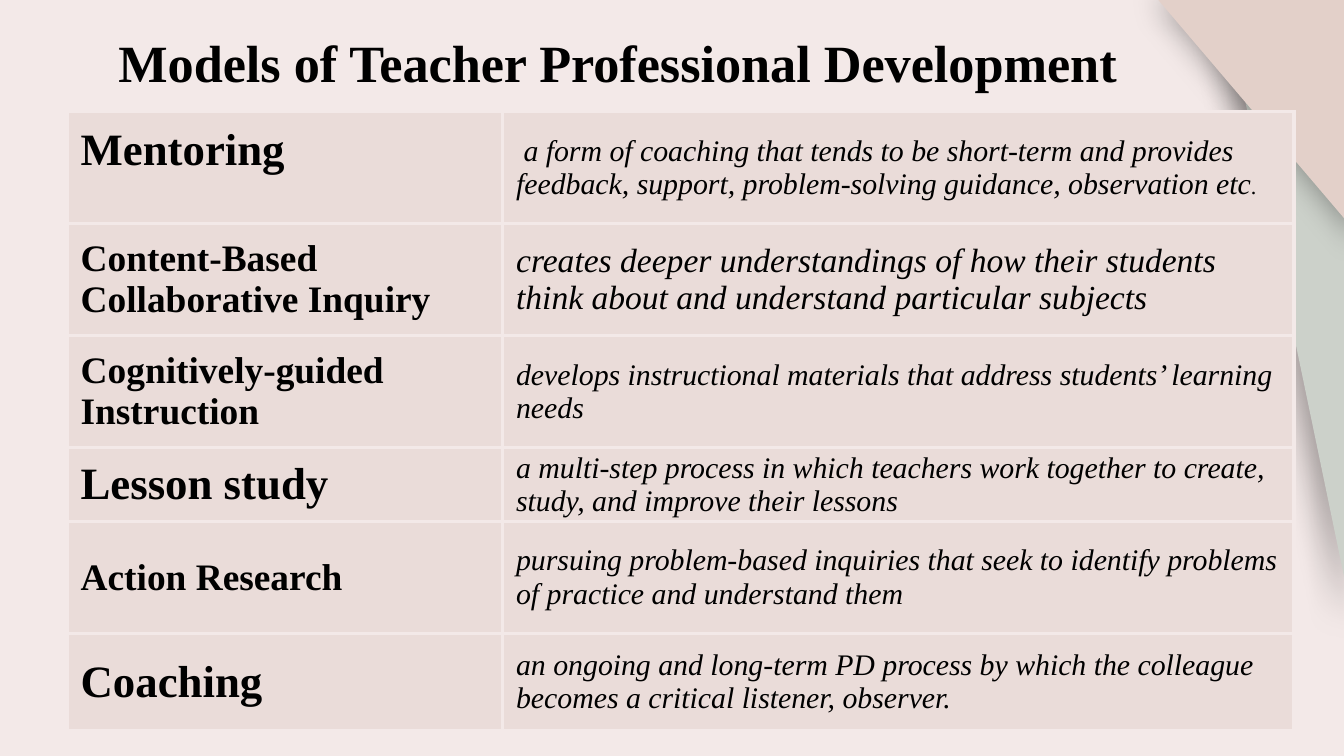
"""Builds the slide on models of teacher professional development."""
from lxml import etree
from pptx import Presentation
from pptx.dml.color import RGBColor
from pptx.enum import text
from pptx.oxml import ns
from pptx.util import Pt

MODELS = [
    ("Mentoring", 24, 60,
     [(" a form of coaching that tends to be short-term and provides feedback, "
       "support, problem-solving guidance, observation etc", 16), (".", 12)]),
    ("Content-Based Collaborative Inquiry", 20, 60,
     [("creates deeper understandings of how their students think about and "
       "understand particular subjects", 18)]),
    ("Cognitively-guided Instruction", 20, 60,
     [("develops instructional materials that address students’ learning needs", 16)]),
    ("Lesson study", 24, 39.6,
     [("a multi-step process in which teachers work together to create, study, "
       "and improve their lessons", 16)]),
    ("Action Research", 20, 60,
     [("pursuing problem-based inquiries that seek to identify problems of "
       "practice and understand them", 16)]),
    ("Coaching", 24, 52,
     [("an ongoing and long-term PD process by which the colleague becomes a "
       "critical listener, observer.", 16)]),
]


def color(code):
    return RGBColor.from_string(code)


def add_xml(parent, tag, **attributes):
    return etree.SubElement(parent, ns.qn(tag), **attributes)


class Deck:
    face = "Times New Roman"
    ink = "000000"
    paper = "F3E9E8"
    panel = "EADCD9"

    def __init__(self, width, height):
        self.presentation = Presentation()
        self.presentation.slide_width = Pt(width)
        self.presentation.slide_height = Pt(height)
        self.slide = self.presentation.slides.add_slide(
            self.presentation.slide_layouts[5])
        fill = self.slide.background.fill
        fill.solid()
        fill.fore_color.rgb = color(self.paper)

    def style(self, font, **traits):
        font.name = self.face
        font.color.rgb = color(self.ink)
        for trait, value in traits.items():
            setattr(font, trait, value)

    def fold(self, corners, tint, angle):
        start, *others = [(Pt(x), Pt(y)) for x, y in corners]
        builder = self.slide.shapes.build_freeform(*start)
        builder.add_line_segments(others)
        paper_fold = builder.convert_to_shape()
        paper_fold.fill.solid()
        paper_fold.fill.fore_color.rgb = color(tint)
        paper_fold.line.fill.background()
        effects = add_xml(paper_fold.element.spPr, "a:effectLst")
        shadow = add_xml(effects, "a:outerShdw", blurRad=str(Pt(16.9)),
                         dist=str(Pt(6)), dir=str(angle * 60000),
                         algn="ctr", rotWithShape="0")
        shade = add_xml(shadow, "a:srgbClr", val=self.ink)
        add_xml(shade, "a:alpha", val="35000")

    def title(self, wording, left, top, width, height):
        heading = self.slide.shapes.title
        heading.left, heading.top = Pt(left), Pt(top)
        heading.width, heading.height = Pt(width), Pt(height)
        self.slide.shapes.element.append(heading.element)
        frame = heading.text_frame
        frame.text = wording
        frame.auto_size = text.MSO_AUTO_SIZE.NONE
        frame.vertical_anchor = text.MSO_ANCHOR.MIDDLE
        frame.margin_left = frame.margin_right = Pt(7.2)
        frame.margin_top = frame.margin_bottom = Pt(7.2)
        paragraph = frame.paragraphs[0]
        paragraph.alignment = text.PP_ALIGN.LEFT
        self.style(paragraph.font, size=Pt(28), bold=True)

    def cell(self, cell, parts, **traits):
        cell.fill.solid()
        cell.fill.fore_color.rgb = color(self.panel)
        cell.vertical_anchor = text.MSO_ANCHOR.MIDDLE
        cell.margin_left = cell.margin_right = Pt(7.2)
        cell.margin_top = cell.margin_bottom = 0
        paragraph = cell.text_frame.paragraphs[0]
        self.style(paragraph.font, size=Pt(parts[0][1]), **traits)
        for wording, size in parts:
            run = paragraph.add_run()
            run.text = wording
            self.style(run.font, size=Pt(size), **traits)
        properties = cell._tc.get_or_add_tcPr()
        for position, side in enumerate("LRTB"):
            border = add_xml(properties, f"a:ln{side}", w=str(Pt(2.25)))
            add_xml(add_xml(border, "a:solidFill"), "a:srgbClr", val=self.paper)
            properties.insert(position, border)

    def table(self, models, left, top, widths):
        heights = [height for _, _, height, _ in models]
        table = self.slide.shapes.add_table(
            len(models), len(widths), Pt(left), Pt(top),
            Pt(sum(widths)), Pt(sum(heights))).table
        table.first_row = table.horz_banding = False
        for column, width in zip(table.columns, widths):
            column.width = Pt(width)
        for index, (model, size, height, description) in enumerate(models):
            table.rows[index].height = Pt(height)
            self.cell(table.cell(index, 0), [(model, size)], bold=True, italic=False)
            self.cell(table.cell(index, 1), description, bold=False, italic=True)
        return table


def main():
    deck = Deck(720, 405)
    deck.fold([(735, -7), (654.5, -6.5), (725, 332.6)], "CCD1CA", 181)
    deck.fold([(726.5, -3), (726.5, 124.5), (616.3, -5)], "E3D0C9", 60)
    deck.title("Models of Teacher Professional Development", 56.2, 6.5, 607, 53.3)
    models = deck.table(MODELS, 36, 59.8, [233.3, 424])
    models.cell(0, 0).margin_bottom = Pt(19)
    deck.presentation.save("out.pptx")


if __name__ == "__main__":
    main()
